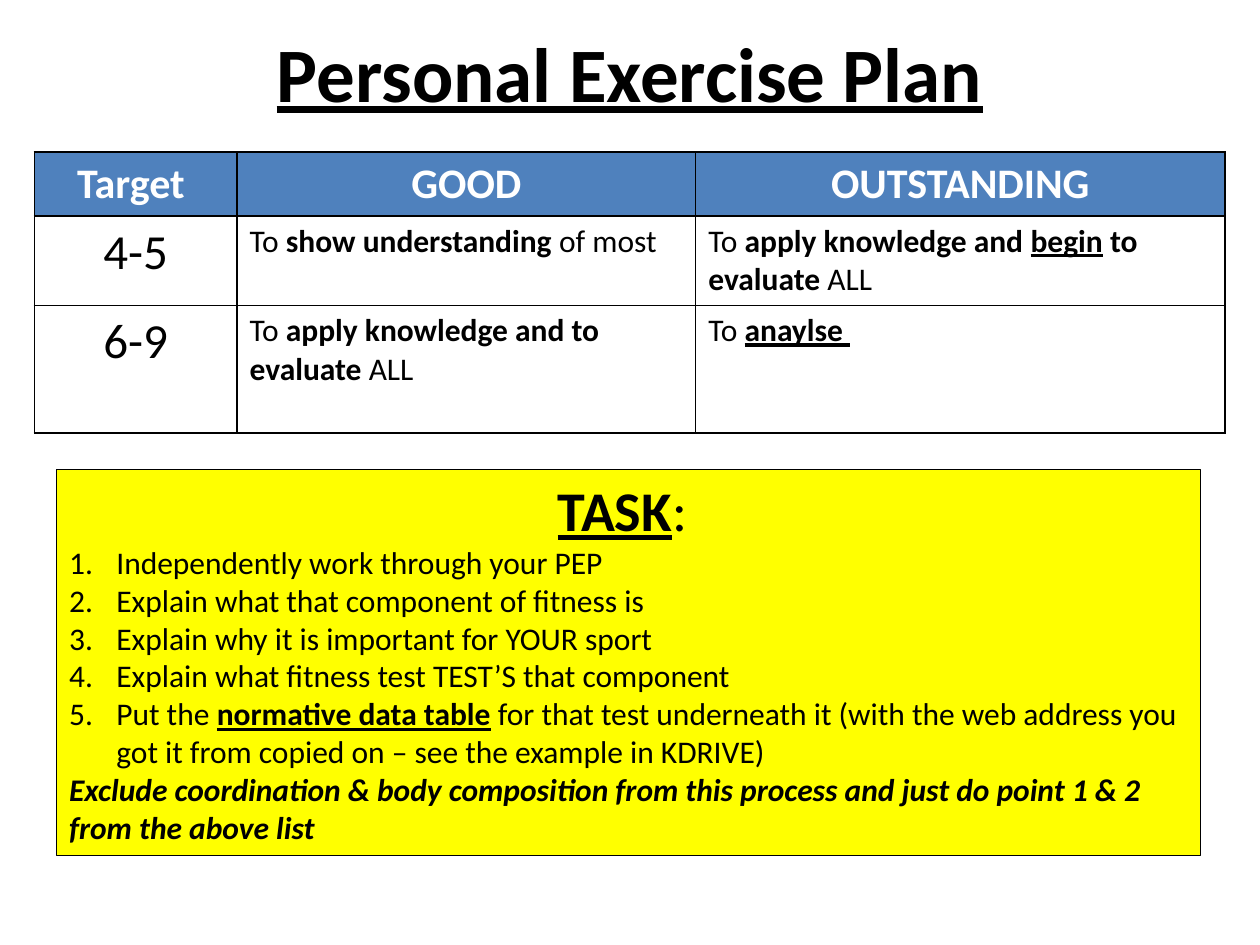
import pptx
import pptx.util
import pptx.dml.color
import pptx.enum.shapes
import pptx.enum.text
import pptx.oxml
import pptx.oxml.ns
import lxml.etree

Pt = pptx.util.Pt
RGB = pptx.dml.color.RGBColor
ALIGN = pptx.enum.text.PP_ALIGN
ANCHOR = pptx.enum.text.MSO_ANCHOR

BLACK = RGB(0x00, 0x00, 0x00)
WHITE = RGB(0xFF, 0xFF, 0xFF)
BLUE = RGB(0x4F, 0x81, 0xBD)
YELLOW = RGB(0xFF, 0xFF, 0x00)
FONT = "Calibri"

# Content: each run is (text, style), with style letters b, i and u
TITLE = [("Personal Exercise Plan", "bu")]
HEADS = ["Target ", "GOOD", "OUTSTANDING"]
LEVELS = [
    ("4-5",
     [("To ", ""), ("show understanding ", "b"), ("of most", "")],
     [("To ", ""), ("apply knowledge and ", "b"), ("begin", "bu"),
      (" to evaluate ", "b"), ("ALL", "")]),
    ("6-9",
     [("To ", ""), ("apply knowledge and to evaluate ", "b"), ("ALL", "")],
     [("To ", ""), ("anaylse ", "bu")]),
]
TASK = [("TASK", "bu"), (": ", "")]
STEPS = [
    [("Independently work through your PEP", "")],
    [("Explain what that component of fitness is", "")],
    [("Explain why it is important for YOUR sport", "")],
    [("Explain what fitness test TEST’S that component", "")],
    [("Put the ", ""), ("normative data table", "bu"),
     (" for that test underneath it (with the web address you got it "
      "from copied on – see the example in KDRIVE)", "")],
]
NOTE = [("Exclude coordination & body composition from this process and "
         "just do point 1 & 2 from the above list", "bi")]

COLS = [115.9, 262.1, 302.4]
ROWS = [36.5, 51, 73]
INDENT = 27


def write(para, runs, size, color=BLACK, align=ALIGN.LEFT):
    para.alignment = align
    for text, style in runs:
        run = para.add_run()
        run.text = text
        font = run.font
        font.name, font.size = FONT, Pt(size)
        font.color.rgb = color
        font.bold = "b" in style
        font.italic = "i" in style
        font.underline = "u" in style


def number(para):
    props = para._p.get_or_add_pPr()
    props.set("marL", str(Pt(INDENT)))
    props.set("indent", str(-Pt(INDENT)))
    mark = lxml.etree.SubElement(props, pptx.oxml.ns.qn("a:buAutoNum"))
    mark.set("type", "arabicPeriod")


def border(cell):
    props = cell._tc.get_or_add_tcPr()
    for at, side in enumerate(("lnL", "lnR", "lnT", "lnB")):
        line = pptx.oxml.parse_xml(
            f'<a:{side} {pptx.oxml.ns.nsdecls("a")} w="{Pt(1)}"><a:solidFill>'
            f'<a:srgbClr val="{BLACK}"/></a:solidFill></a:{side}>')
        props.insert(at, line)


def fill(cell, runs, size, back=WHITE, color=BLACK, align=ALIGN.LEFT):
    cell.fill.solid()
    cell.fill.fore_color.rgb = back
    border(cell)
    write(cell.text_frame.paragraphs[0], runs, size, color, align)


deck = pptx.Presentation()
deck.slide_width, deck.slide_height = Pt(720), Pt(540)
slide = deck.slides.add_slide(deck.slide_layouts[6])

# Title
title = slide.shapes.add_textbox(Pt(54), Pt(1.5), Pt(612), Pt(78.5)).text_frame
title.word_wrap = True
title.vertical_anchor = ANCHOR.MIDDLE
write(title.paragraphs[0], TITLE, 44, align=ALIGN.CENTER)

# Target table
table = slide.shapes.add_table(
    len(ROWS), len(COLS), Pt(19.6), Pt(87), Pt(sum(COLS)), Pt(sum(ROWS))).table
for col, width in zip(table.columns, COLS):
    col.width = Pt(width)
for row, height in zip(table.rows, ROWS):
    row.height = Pt(height)
for c, head in enumerate(HEADS):
    fill(table.cell(0, c), [(head, "b")], 24, BLUE, WHITE, ALIGN.CENTER)
for r, (level, *goals) in enumerate(LEVELS, 1):
    fill(table.cell(r, 0), [(level, "")], 28, align=ALIGN.CENTER)
    for c, goal in enumerate(goals, 1):
        fill(table.cell(r, c), goal, 18)

# Task box
box = slide.shapes.add_shape(
    pptx.enum.shapes.MSO_SHAPE.RECTANGLE, Pt(32.4), Pt(268.4), Pt(653.8), Pt(220.3))
box.shadow.inherit = False
box.fill.solid()
box.fill.fore_color.rgb = YELLOW
box.line.color.rgb = BLACK
box.line.width = Pt(0.75)
frame = box.text_frame
frame.word_wrap = True
frame.vertical_anchor = ANCHOR.TOP
write(frame.paragraphs[0], TASK, 32, align=ALIGN.CENTER)
for step in STEPS:
    para = frame.add_paragraph()
    write(para, step, 18)
    number(para)
write(frame.add_paragraph(), NOTE, 18)

deck.save("out.pptx")
